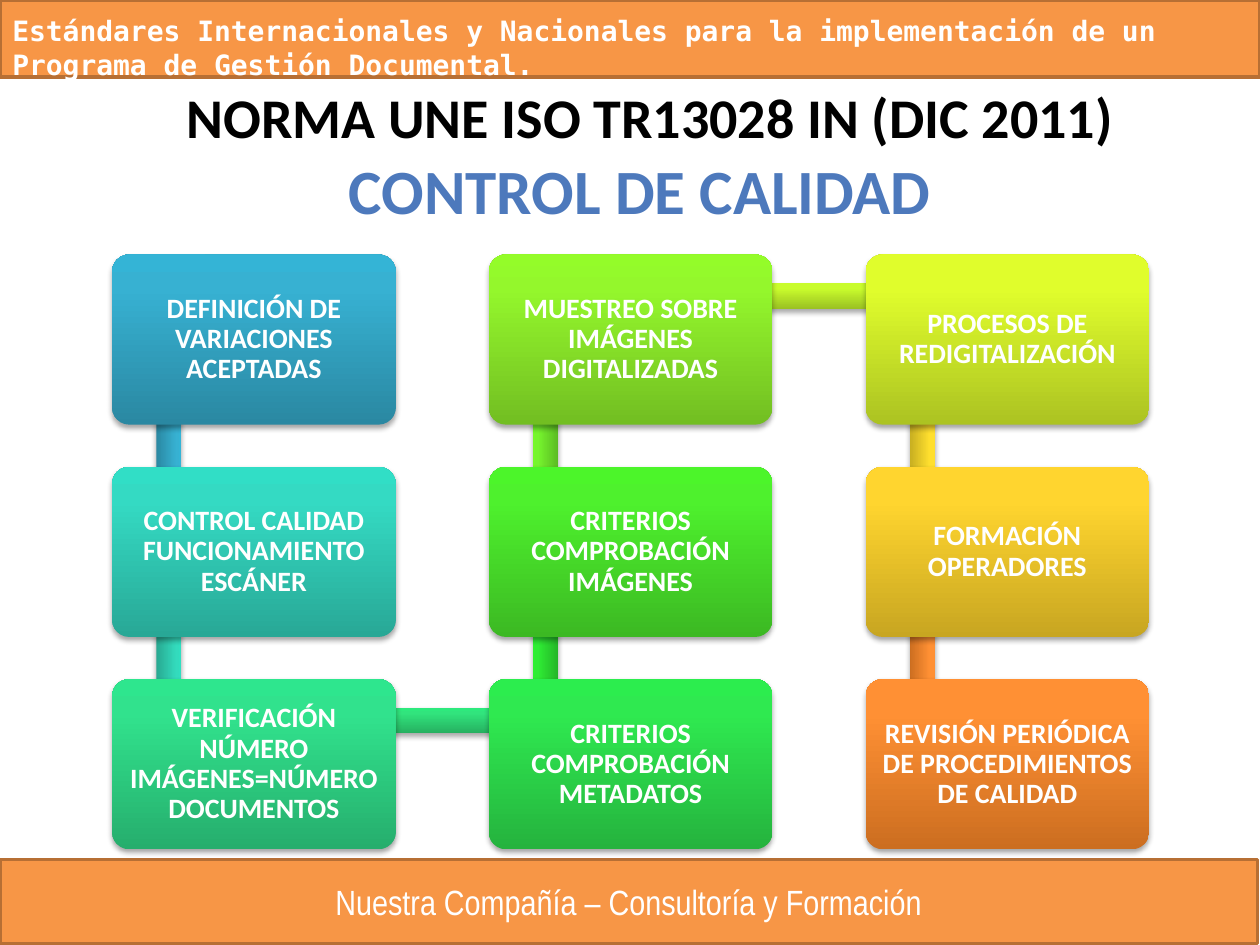
"""Build the quality control slide with its nine-step winding process."""
from lxml import etree
from pptx import Presentation
from pptx.dml.color import RGBColor
from pptx.enum.shapes import MSO_SHAPE as Shape
from pptx.enum.text import MSO_ANCHOR as Anchor, MSO_AUTO_SIZE as AutoSize, PP_ALIGN as Align
from pptx.oxml import parse_xml
from pptx.oxml.ns import nsdecls, qn
from pptx.util import Inches, Pt

THEME = {
    "band": "F79646", "band_line": "B76F34", "light": "FFFFFF", "dark": "000000",
    "body_font": "Calibri", "header_font": "DejaVu Sans Mono", "footer_font": "Arial Narrow",
    "title_size": 32, "subtitle_size": 36, "footer_size": 20, "small_size": 16,
    "subtitle_stops": [(0, "7494C9"), (49, "4D79BC"), (50, "346AAA"), (92, "325F94"), (100, "315D91")],
    "stop_positions": (0, 80, 100),
    "card_colors": [
        ("2A88A2", "37B1D2", "34B4D6"), ("28A896", "34DAC3", "31DEC6"), ("26AE6D", "31E28D", "2EE68E"),
        ("25B33E", "2FE950", "2CED4E"), ("3CB923", "4EF12D", "4CF52A"), ("72BE22", "94F72C", "94FC29"),
        ("ACC322", "E0FD2C", "E2FF2B"), ("C8A621", "FFD52F", "FFD531"), ("CC6E20", "FF9034", "FF9136"),
    ],
    "bar_colors": [
        ("2A88A2", "37B1D2", "34B4D6"), ("28A991", "33DBBD", "30DFC0"), ("26B060", "31E47D", "2EE97D"),
        ("24B628", "2FEC34", "2CF131"), ("5BBC23", "76F42D", "75F929"), ("9BC222", "C9FC2C", "CBFF2A"),
        ("C7AE21", "FFDF2E", "FFDF30"), ("CC6E20", "FF9034", "FF9136"),
    ],
}

STEPS = [
    "DEFINICIÓN DE VARIACIONES ACEPTADAS",
    "CONTROL CALIDAD FUNCIONAMIENTO ESCÁNER",
    "VERIFICACIÓN NÚMERO IMÁGENES=NÚMERO DOCUMENTOS",
    "CRITERIOS COMPROBACIÓN METADATOS",
    "CRITERIOS COMPROBACIÓN IMÁGENES",
    "MUESTREO SOBRE IMÁGENES DIGITALIZADAS",
    "PROCESOS DE REDIGITALIZACIÓN",
    "FORMACIÓN OPERADORES",
    "REVISIÓN PERIÓDICA DE PROCEDIMIENTOS DE CALIDAD",
]


def write_text(shape, text, *, size, font=THEME["body_font"], color=THEME["light"], bold=True,
               align=Align.CENTER, anchor=Anchor.MIDDLE, margins=(0.1, 0.05, 0.1, 0.05),
               spacing=1.0, wrap=True):
    frame = shape.text_frame
    frame.auto_size = AutoSize.NONE
    frame.word_wrap = wrap
    frame.vertical_anchor = anchor
    frame.margin_left, frame.margin_top, frame.margin_right, frame.margin_bottom = map(Inches, margins)
    paragraph = frame.paragraphs[0]
    paragraph.alignment = align
    paragraph.line_spacing = spacing
    run = paragraph.add_run()
    run.text = text
    run.font.name = font
    run.font.size = Pt(size)
    run.font.bold = bold
    run.font.color.rgb = RGBColor.from_string(color)
    return run


def paint_gradient(fill, properties, stops, angle):
    fill.background()
    gradient = parse_xml(f'<a:gradFill {nsdecls("a")} rotWithShape="1"><a:gsLst/></a:gradFill>')
    for position, color in stops:
        stop = etree.SubElement(gradient[0], qn("a:gs"), pos=str(position * 1000))
        etree.SubElement(stop, qn("a:srgbClr"), val=color)
    etree.SubElement(gradient, qn("a:lin"), ang=str(angle * 60000), scaled="0")
    properties.replace(properties.find(qn("a:noFill")), gradient)


presentation = Presentation()
presentation.slide_width, presentation.slide_height = Inches(10), Inches(7.5)
slide = presentation.slides.add_slide(presentation.slide_layouts[5])

bands = []
for box in [(0, 6.82, 9.98, 0.67), (0, 0, 10, 0.61)]:
    band = slide.shapes.add_shape(Shape.RECTANGLE, *map(Inches, box))
    band.shadow.inherit = False
    band.fill.solid()
    band.fill.fore_color.rgb = RGBColor.from_string(THEME["band"])
    band.line.color.rgb = RGBColor.from_string(THEME["band_line"])
    band.line.width = Pt(2)
    bands.append(band)
footer, header = bands
write_text(footer, "Nuestra Compañía – Consultoría y Formación", size=THEME["footer_size"],
           font=THEME["footer_font"], bold=False)
write_text(header,
           "Estándares Internacionales y Nacionales para la implementación de un Programa de Gestión Documental.",
           size=THEME["small_size"], font=THEME["header_font"], align=Align.LEFT,
           anchor=Anchor.TOP, margins=(0.1, 0.11, 0.1, 0))

title = slide.shapes.title
title.left, title.top, title.width, title.height = map(Inches, (1.38, 0.6, 7.63, 0.64))
write_text(title, "NORMA UNE ISO TR13028 IN (DIC 2011)", size=THEME["title_size"],
           color=THEME["dark"], align=Align.LEFT, wrap=False)

subtitle = slide.shapes.add_textbox(*map(Inches, (2.56, 1.15, 5.04, 0.71)))
subtitle_run = write_text(subtitle, "CONTROL DE CALIDAD", size=THEME["subtitle_size"], anchor=Anchor.TOP)
paint_gradient(subtitle_run.font.fill, subtitle_run.font.fill._xPr, THEME["subtitle_stops"], 90)

LEFT, TOP, COLUMN_STEP, ROW_STEP = 0.89, 2.02, 2.99, 1.685
CARD_WIDTH, CARD_HEIGHT, BAR_THICKNESS = 2.25, 1.35, 0.2
places = []
for index in range(len(STEPS)):
    column, offset = divmod(index, 3)
    row = 2 - offset if column == 1 else offset
    places.append((column, LEFT + column * COLUMN_STEP, TOP + row * ROW_STEP))

for index, (text, (column, left, top)) in enumerate(zip(STEPS, places)):
    pieces = []
    if index < len(STEPS) - 1:
        next_column, _, next_top = places[index + 1]
        turns = next_column != column
        length = COLUMN_STEP if turns else ROW_STEP
        center_x = left + 0.45 + (length / 2 if turns else 0)
        center_y = top + 0.33 if turns else min(top, next_top) + 1.17
        bar = slide.shapes.add_shape(Shape.RECTANGLE, Inches(center_x - length / 2),
                                     Inches(center_y - BAR_THICKNESS / 2),
                                     Inches(length), Inches(BAR_THICKNESS))
        if not turns:
            bar.rotation = 270 if column == 1 else 90
        pieces.append((bar, THEME["bar_colors"][index]))
    card = slide.shapes.add_shape(Shape.ROUNDED_RECTANGLE, Inches(left), Inches(top),
                                  Inches(CARD_WIDTH), Inches(CARD_HEIGHT))
    card.adjustments[0] = 0.1
    write_text(card, text, size=THEME["small_size"], margins=(0.07,) * 4, spacing=0.9)
    pieces.append((card, THEME["card_colors"][index]))
    for piece, colors in pieces:
        properties = piece._element.spPr
        paint_gradient(piece.fill, properties, zip(THEME["stop_positions"], colors), 270)
        piece.line.fill.background()
        piece.shadow.inherit = False
        properties.find(qn("a:effectLst")).append(parse_xml(
            f'<a:outerShdw {nsdecls("a")} blurRad="{Pt(3.1)}" dist="{Pt(1.8)}" dir="5400000" rotWithShape="0">'
            f'<a:srgbClr val="{THEME["dark"]}"><a:alpha val="35000"/></a:srgbClr></a:outerShdw>'))

presentation.save("out.pptx")
